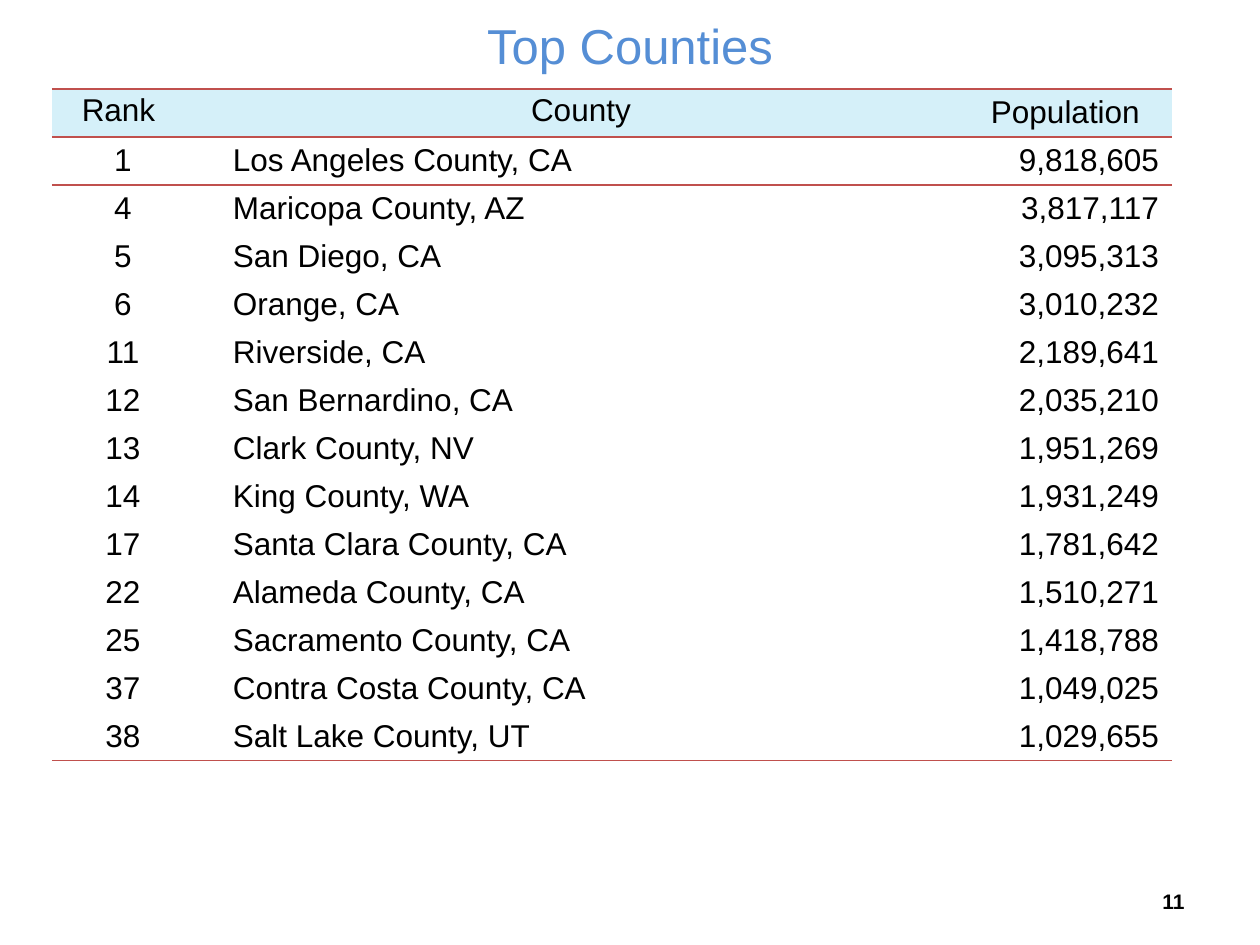
from lxml.etree import SubElement
from pptx import Presentation
from pptx.dml.color import RGBColor
from pptx.enum.text import MSO_ANCHOR as ANCHOR, PP_ALIGN as ALIGN
from pptx.oxml.ns import qn
from pptx.util import Emu, Pt

PX = 914400 / 126
NO_GRID_STYLE = "{2D5ABB26-0587-4C30-8999-92F81FD0307C}"
ROWS = [
    ("1", "Los Angeles County, CA", "9,818,605"),
    ("4", "Maricopa County, AZ", "3,817,117"),
    ("5", "San Diego, CA", "3,095,313"),
    ("6", "Orange, CA", "3,010,232"),
    ("11", "Riverside, CA", "2,189,641"),
    ("12", "San Bernardino, CA", "2,035,210"),
    ("13", "Clark County, NV", "1,951,269"),
    ("14", "King County, WA", "1,931,249"),
    ("17", "Santa Clara County, CA", "1,781,642"),
    ("22", "Alameda County, CA", "1,510,271"),
    ("25", "Sacramento County, CA", "1,418,788"),
    ("37", "Contra Costa County, CA", "1,049,025"),
    ("38", "Salt Lake County, UT", "1,029,655"),
]


def px(n):
    return Emu(round(n * PX))


def rgb(value):
    return RGBColor.from_string(value)


def write(tf, text, size=18, color="000000", bold=False, align=ALIGN.LEFT, spacing=None):
    p = tf.paragraphs[0]
    p.alignment = align
    p.line_spacing = spacing
    r = p.add_run()
    r.text = text
    r.font.name = "Arial"
    r.font.size = Pt(size)
    r.font.bold = bold
    r.font.color.rgb = rgb(color)


class SlideBuilder:
    """Holds the table style and the current slide, and adds elements to it."""

    rule = "C0504D"
    head_fill = "D5F0F9"

    def __init__(self, slide):
        self.slide = slide

    def text(self, x, y, w, h, text, **fmt):
        tf = self.slide.shapes.add_textbox(px(x), px(y), px(w), px(h)).text_frame
        tf.word_wrap = True
        tf.vertical_anchor = ANCHOR.MIDDLE
        write(tf, text, **fmt)

    def borders(self, cell, ruled):
        tc_pr = cell._tc.get_or_add_tcPr()
        for side in ruled:
            ln = SubElement(tc_pr, qn(f"a:ln{side}"), w=str(Pt(1)),
                            cap="flat", cmpd="sng", algn="ctr")
            fill = SubElement(ln, qn("a:solidFill"))
            SubElement(fill, qn("a:srgbClr"), val=self.rule)
            SubElement(ln, qn("a:prstDash"), val="solid")

    def cell(self, cell, text, ruled="", fill=None, left=13, right=13, **fmt):
        self.borders(cell, ruled)
        if fill:
            cell.fill.solid()
            cell.fill.fore_color.rgb = rgb(fill)
        else:
            cell.fill.background()
        cell.margin_left, cell.margin_right = px(left), px(right)
        cell.margin_top, cell.margin_bottom = px(6), px(2)
        write(cell.text_frame, text, **fmt)

    def table(self, x, y, widths, row_h, head, rows, formats):
        n = len(rows) + 1
        frame = self.slide.shapes.add_table(
            n, len(widths), px(x), px(y), px(sum(widths)), px(row_h * n))
        table = frame.table
        table.first_row = table.horz_banding = False
        table._tbl.tblPr.find(qn("a:tableStyleId")).text = NO_GRID_STYLE
        for col, w in zip(table.columns, widths):
            col.width = px(w)
        for row in table.rows:
            row.height = px(row_h)
        for c, (text, fmt) in enumerate(head):
            self.cell(table.cell(0, c), text, "TB", self.head_fill, align=ALIGN.CENTER, **fmt)
        for i, row in enumerate(rows, 1):
            ruled = "T" if i == 1 else "B" if i == len(rows) else ""
            for c, (text, fmt) in enumerate(zip(row, formats)):
                self.cell(table.cell(i, c), text, ruled, **fmt)


def main():
    prs = Presentation()
    prs.slide_width, prs.slide_height = px(1260), px(945)
    s = SlideBuilder(prs.slides.add_slide(prs.slide_layouts[6]))
    s.text(0, 0, 1260, 89, "Top Counties", size=28, color="558ED5", align=ALIGN.CENTER)
    head = [
        ("Rank", {"right": 22, "spacing": 0.95}),
        ("County", {"left": 22, "spacing": 0.95}),
        ("Population", {}),
    ]
    formats = [{"align": ALIGN.CENTER}, {"left": 39}, {"align": ALIGN.RIGHT}]
    s.table(52, 89, [142, 765, 213], 48, head, ROWS, formats)
    s.text(903, 876, 294, 50, "11", size=12, bold=True, align=ALIGN.RIGHT)
    prs.save("out.pptx")


if __name__ == "__main__":
    main()
